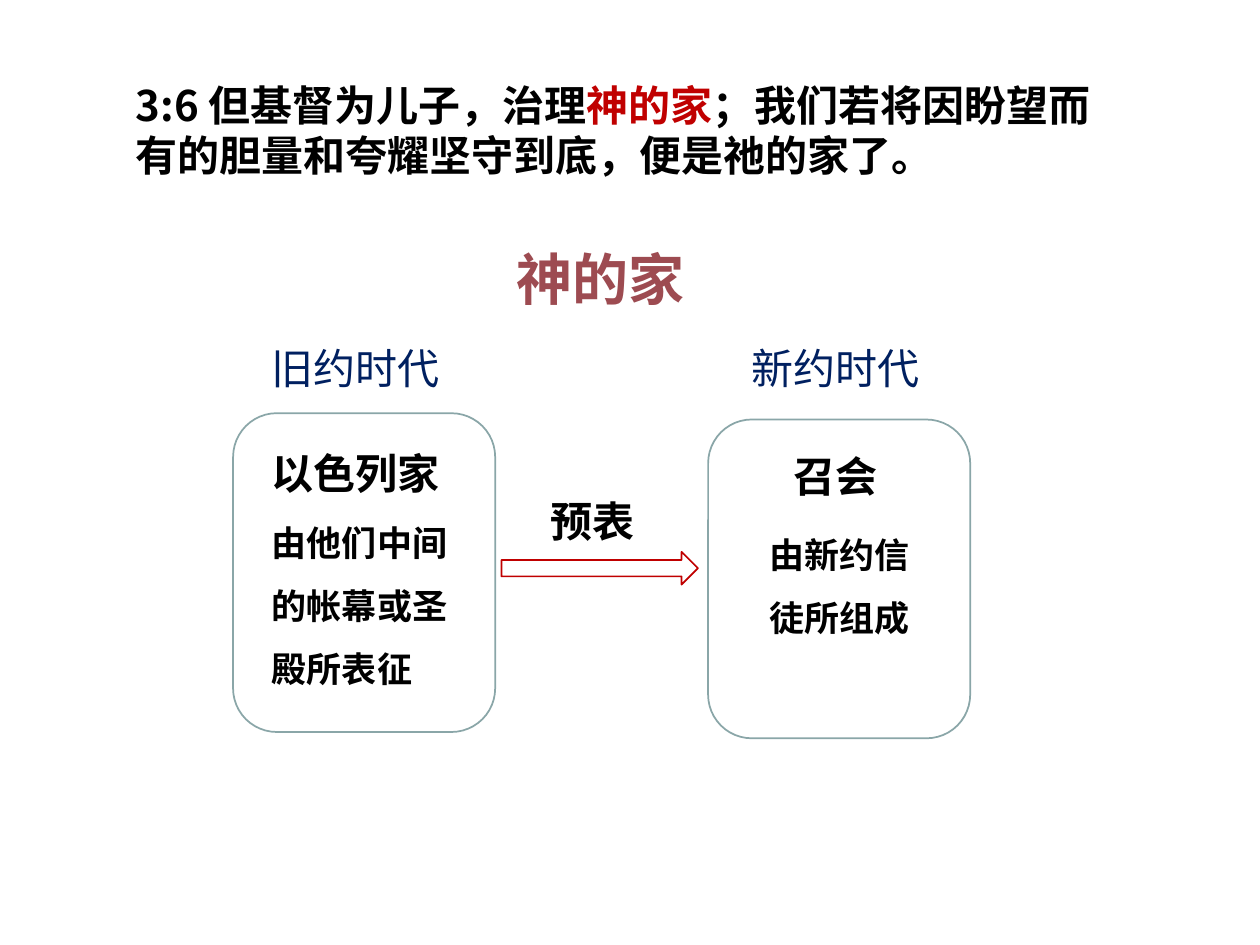
from dataclasses import dataclass

import pptx
import pptx.dml.color
import pptx.enum.shapes
import pptx.enum.text
import pptx.util
from lxml import etree
from pptx.oxml.ns import qn

COLS, ROWS = 100, 75  # grid cells of 0.1 inch
CELL = pptx.util.Inches(0.1)
NOTO = "Noto Sans CJK SC"
HUES = {
    "ink": "000000",
    "red": "C00000",
    "rose": "9D4B51",
    "navy": "002060",
    "frame": "8AA6A8",
}
KIND = pptx.enum.shapes.MSO_SHAPE


@dataclass
class Area:
    col: float
    row: float
    wide: float
    high: float

    def place(self) -> list[int]:
        return [round(n * CELL) for n in (self.col, self.row, self.wide, self.high)]


@dataclass
class Label:
    area: Area
    runs: list[tuple[str, str]]  # text, colour name
    size: int = 24
    font: str = NOTO
    bold: bool = True
    wrap: bool = False
    lead: float = 1.0


@dataclass
class Frame:
    area: Area
    kind: KIND
    hue: str


def tint(name: str) -> pptx.dml.color.RGBColor:
    return pptx.dml.color.RGBColor.from_string(HUES[name])


def write(slide, label: Label) -> None:
    box = slide.shapes.add_textbox(*label.area.place())
    text = box.text_frame
    text.word_wrap = label.wrap
    text.auto_size = pptx.enum.text.MSO_AUTO_SIZE.SHAPE_TO_FIT_TEXT
    para = text.paragraphs[0]
    para.line_spacing = label.lead
    for words, hue in label.runs:
        run = para.add_run()
        run.text = words
        font = run.font
        font.name, font.size = label.font, pptx.util.Pt(label.size)
        font.bold = label.bold
        font.color.rgb = tint(hue)
        east = etree.Element(qn("a:ea"), typeface=NOTO)
        run._r.rPr.find(qn("a:latin")).addnext(east)


def outline(slide, frame: Frame) -> None:
    shape = slide.shapes.add_shape(frame.kind, *frame.area.place())
    shape.shadow.inherit = False
    shape.fill.background()
    shape.line.color.rgb = tint(frame.hue)
    shape.line.width = pptx.util.Pt(1)


VERSE = [
    ("3:6 但基督为儿子，治理", "ink"),
    ("神的家", "red"),
    ("；我们若将因盼望而有的胆量和夸耀坚守到底，便是祂的家了。", "ink"),
]
LABELS = [
    Label(Area(9.8, 5.8, 80.4, 9.1), VERSE, wrap=True),
    Label(Area(40, 18.9, 15.4, 6.4), [("神的家", "rose")], size=32),
    Label(Area(20.6, 26.7, 15.3, 5), [("旧约时代", "navy")], bold=False),
    Label(Area(58.7, 26.7, 15.3, 5), [("新约时代", "navy")], bold=False),
    Label(Area(20.6, 35, 15.4, 5), [("以色列家", "ink")], font="Arial"),
    Label(Area(62, 35.3, 8.7, 5), [("召会", "ink")], font="Arial"),
    Label(Area(42.7, 38.8, 8.7, 5), [("预表", "ink")]),
    Label(Area(20.6, 39.2, 17.3, 16.1), [("由他们中间的帐幕或圣殿所表征", "ink")],
          size=20, font="Arial", wrap=True, lead=1.5),
    Label(Area(60.1, 40.2, 15.8, 11.1), [("由新约信徒所组成", "ink")],
          size=20, font="Arial", wrap=True, lead=1.5),
]
FRAMES = [
    Frame(Area(18.5, 32.8, 20.8, 25.3), KIND.ROUNDED_RECTANGLE, "frame"),
    Frame(Area(56.2, 33.3, 20.8, 25.3), KIND.ROUNDED_RECTANGLE, "frame"),
    Frame(Area(39.8, 43.8, 15.6, 2.6), KIND.RIGHT_ARROW, "red"),
]


def main() -> None:
    deck = pptx.Presentation()
    deck.slide_width, deck.slide_height = COLS * CELL, ROWS * CELL
    slide = deck.slides.add_slide(deck.slide_layouts[6])
    for label in LABELS:
        write(slide, label)
    for frame in FRAMES:
        outline(slide, frame)
    deck.save("out.pptx")


if __name__ == "__main__":
    main()
